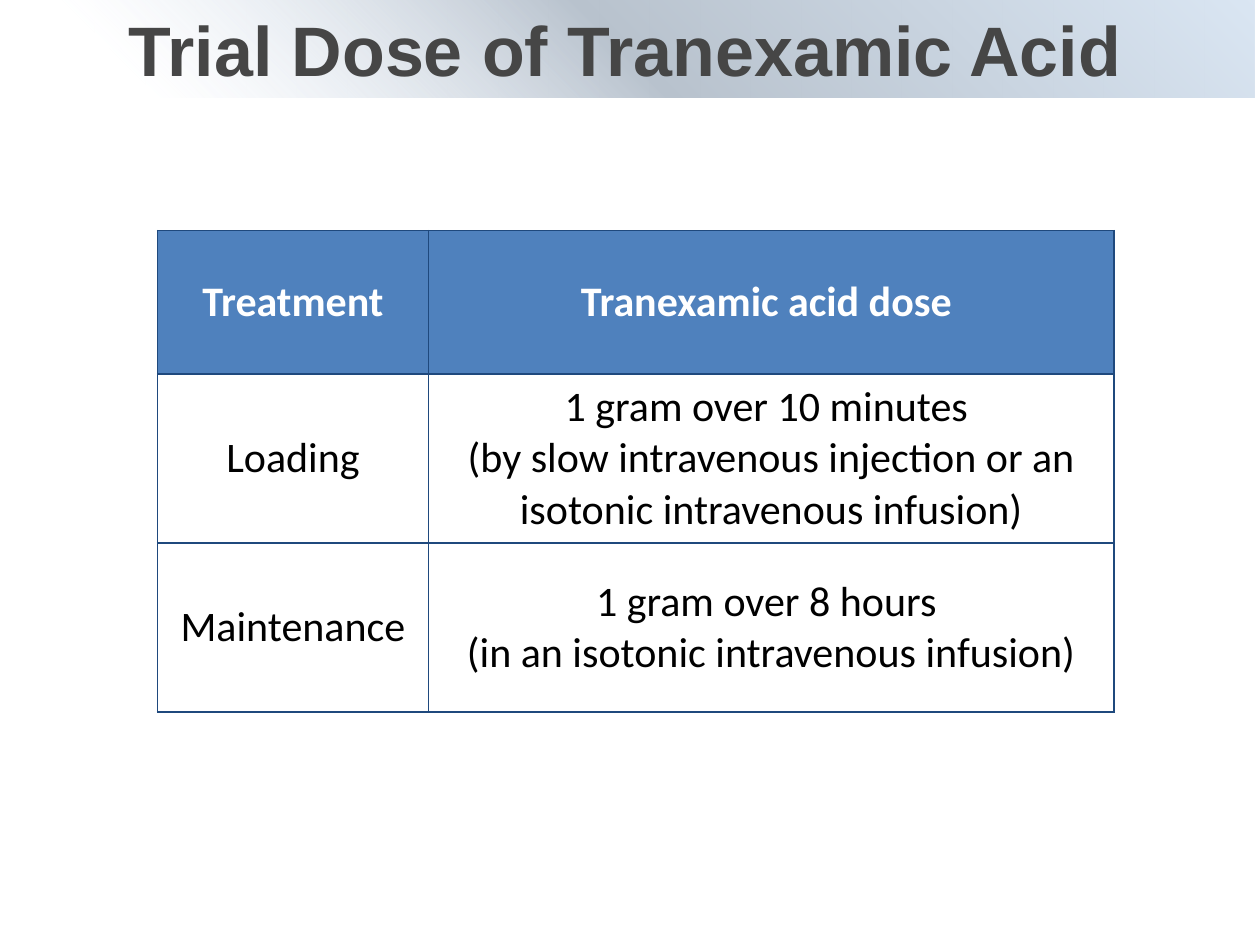
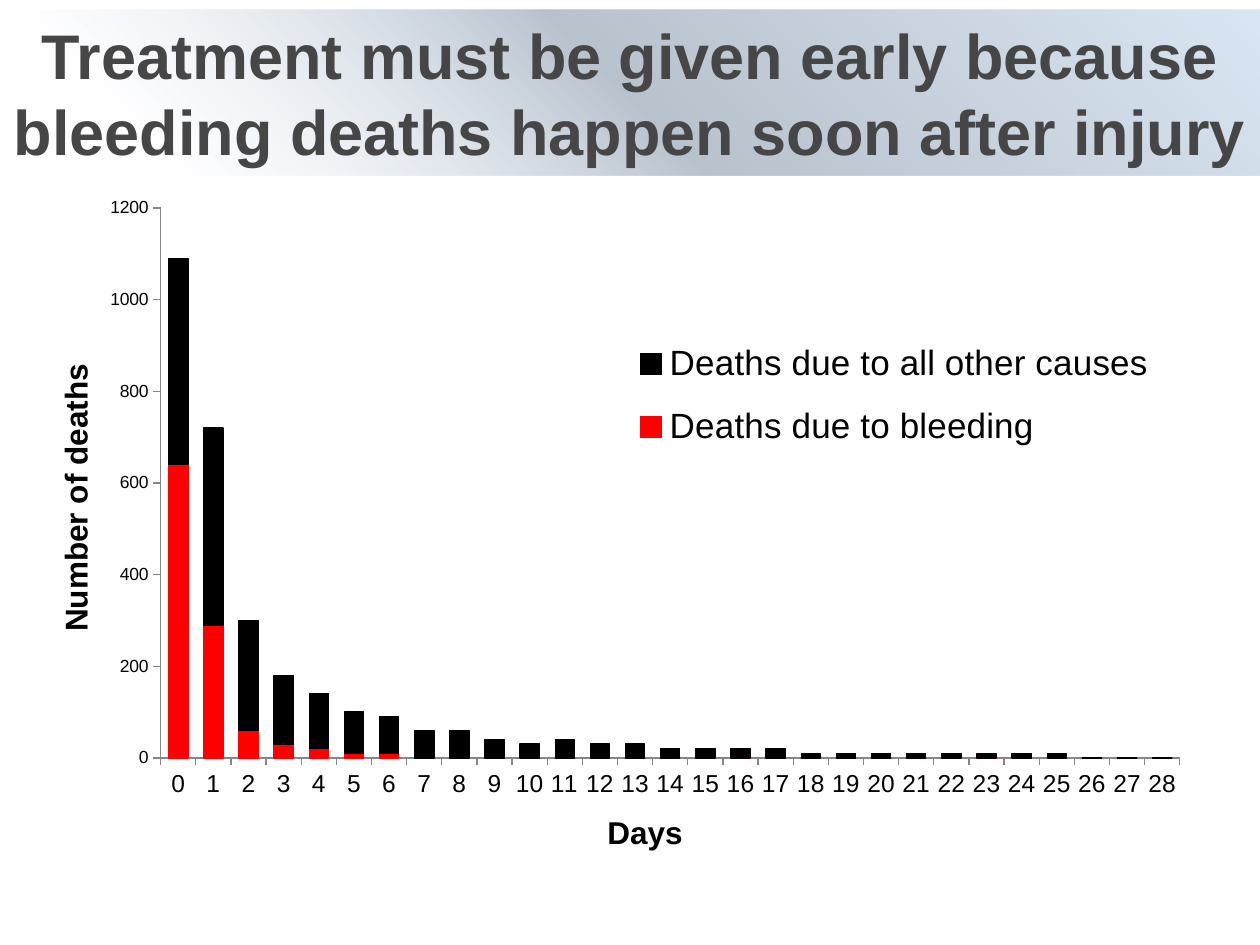
from dataclasses import dataclass
from lxml import etree
from pptx import Presentation
from pptx.chart.data import CategoryChartData
from pptx.dml.color import RGBColor
from pptx.enum.chart import XL_CHART_TYPE as ChartType, XL_LEGEND_POSITION as LegendPos
from pptx.enum.chart import XL_TICK_MARK as TickMark
from pptx.enum.text import MSO_ANCHOR as Anchor, MSO_AUTO_SIZE as AutoSize, PP_ALIGN as Align
from pptx.oxml import parse_xml
from pptx.oxml.ns import nsdecls, qn
from pptx.util import Inches, Pt


# Theme
@dataclass(frozen=True)
class Theme:
    heading_font: str = "Arial"
    table_font: str = "Calibri"
    title: str = "464646"
    header: str = "4F81BD"
    border: str = "1F497D"
    axis: str = "868686"
    white: str = "FFFFFF"
    black: str = "000000"
    red: str = "FF0000"
    band_stops: tuple = ((12, "DCE6F2", 0), (50, "B8C2CD", 100), (100, "DAE6F3", 100))
    band_angle: int = 315
    table_size: int = 24
    axis_title_size: int = 18
    legend_size: int = 20
    day_size: int = 14
    count_size: int = 10


THEME = Theme()
WIDTH, HEIGHT = 10, 7.5

# Content: titles as text, size and band (left, top, width, height)
DOSE_TITLE = ("Trial Dose of Tranexamic Acid", 40, (-0.04, 0, WIDTH, 0.77))
TIMING_TITLE = ("Treatment must be given early because bleeding deaths happen soon after injury",
                36, (0, 0.08, WIDTH, 1.31))

DOSE_ROWS = [
    (["Treatment"], ["Tranexamic acid dose "]),
    (["Loading"], ["1 gram over 10 minutes ",
                   "(by slow intravenous injection or an isotonic intravenous infusion)"]),
    (["Maintenance"], ["1 gram over 8 hours ", "(in an isotonic intravenous infusion)"]),
]
DOSE_CORNER = (1.25, 1.83)
DOSE_COLUMNS = (2.15, 5.44)
DOSE_HEIGHTS = (1.14, 1.34, 1.34)

DAYS = range(29)
DEATHS = [
    ("Deaths due to bleeding", THEME.red, [640, 290, 60, 30, 20, 10, 10] + [0] * 22),
    ("Deaths due to all other causes", THEME.black,
     [450, 430, 240, 150, 120, 90, 80, 60, 60, 40, 30, 40, 30, 30]
     + [20] * 4 + [10] * 8 + [0] * 3),
]
CHART_BOX = (0.39, 1.48, 9.13, 5.35)
PLOT_SHARE = (0.097, 0.032, 0.886, 0.816)
LEGEND_SHARE = (0.5, 0.2, 0.47, 0.22)


def inches(values):
    return [Inches(value) for value in values]


def style_font(font, size, color=THEME.black, name=THEME.heading_font, bold=False):
    font.name, font.size, font.bold = name, Pt(size), bold
    font.color.rgb = RGBColor.from_string(color)


def write_text(frame, lines, **style):
    """Fill a text frame with centred paragraphs in one format."""
    frame.word_wrap = True
    for index, line in enumerate(lines):
        para = frame.add_paragraph() if index else frame.paragraphs[0]
        para.alignment = Align.CENTER
        span = para.add_run()
        span.text = line
        style_font(span.font, **style)


# Shared page with a title on a gradient band
def add_page(deck, title, size, band):
    page = deck.slides.add_slide(deck.slide_layouts[5])
    box = page.shapes.title
    box.left, box.top, box.width, box.height = inches(band)
    stops = "".join(
        f'<a:gs pos="{place * 1000}"><a:srgbClr val="{color}">'
        f'<a:alpha val="{opacity * 1000}"/></a:srgbClr></a:gs>'
        for place, color, opacity in THEME.band_stops)
    box.element.spPr.append(parse_xml(
        f'<a:gradFill {nsdecls("a")} rotWithShape="1"><a:gsLst>{stops}</a:gsLst>'
        f'<a:lin ang="{THEME.band_angle * 60000}" scaled="0"/></a:gradFill>'))
    frame = box.text_frame
    frame.auto_size = AutoSize.NONE
    frame.vertical_anchor = Anchor.MIDDLE
    write_text(frame, [title], size=size, color=THEME.title, bold=True)
    return page


# Dose table
def draw_borders(cell):
    properties = cell._tc.get_or_add_tcPr()
    for index, side in enumerate(("lnL", "lnR", "lnT", "lnB")):
        properties.insert(index, parse_xml(
            f'<a:{side} {nsdecls("a")} w="{Pt(1)}"><a:solidFill>'
            f'<a:srgbClr val="{THEME.border}"/></a:solidFill></a:{side}>'))


def add_dose_table(page):
    size = sum(DOSE_COLUMNS), sum(DOSE_HEIGHTS)
    table = page.shapes.add_table(len(DOSE_ROWS), len(DOSE_COLUMNS),
                                  *inches(DOSE_CORNER + size)).table
    table.horz_banding = False
    for column, width in zip(table.columns, DOSE_COLUMNS):
        column.width = Inches(width)
    for row_index, (row, height) in enumerate(zip(table.rows, DOSE_HEIGHTS)):
        row.height = Inches(height)
        is_header = row_index == 0
        for cell, lines in zip(row.cells, DOSE_ROWS[row_index]):
            cell.vertical_anchor = Anchor.MIDDLE
            cell.margin_left = cell.margin_right = Inches(0.12)
            cell.margin_top = cell.margin_bottom = Inches(0.06)
            if is_header:
                cell.fill.solid()
                cell.fill.fore_color.rgb = RGBColor.from_string(THEME.header)
            else:
                cell.fill.background()
            draw_borders(cell)
            write_text(cell.text_frame, lines, size=THEME.table_size, name=THEME.table_font,
                       color=THEME.white if is_header else THEME.black, bold=is_header)


# Deaths chart
def place_part(part, index, share, inner=False):
    """Fix a chart part at a share (x, y, w, h) of the chart area."""
    for old in part.findall(qn("c:layout")):
        part.remove(old)
    layout = etree.Element(qn("c:layout"))
    manual = etree.SubElement(layout, qn("c:manualLayout"))
    settings = [("layoutTarget", "inner")] if inner else []
    settings += [("xMode", "edge"), ("yMode", "edge"), *zip("xywh", share)]
    for name, value in settings:
        etree.SubElement(manual, qn(f"c:{name}")).set("val", str(value))
    part.insert(index, layout)


def style_axis(axis, title, size):
    axis.has_major_gridlines = False
    axis.major_tick_mark, axis.minor_tick_mark = TickMark.OUTSIDE, TickMark.NONE
    axis.format.line.color.rgb = RGBColor.from_string(THEME.axis)
    style_font(axis.tick_labels.font, size)
    write_text(axis.axis_title.text_frame, [title], size=THEME.axis_title_size, bold=True)


def add_deaths_chart(page):
    data = CategoryChartData()
    data.categories = [str(day) for day in DAYS]
    for name, _, values in DEATHS:
        data.add_series(name, values)
    chart = page.shapes.add_chart(ChartType.COLUMN_STACKED, *inches(CHART_BOX), data).chart
    style_font(chart.font, THEME.count_size)
    chart.has_title = False
    plot = chart.plots[0]
    plot.gap_width, plot.overlap, plot.vary_by_categories = 83, 100, False
    for series, (_, color, _) in zip(plot.series, DEATHS):
        series.format.fill.solid()
        series.format.fill.fore_color.rgb = RGBColor.from_string(color)
        series.format.line.color.rgb = RGBColor.from_string(color)
        series.format.line.width = Pt(0.75)
    style_axis(chart.category_axis, "Days", THEME.day_size)
    counts = chart.value_axis
    style_axis(counts, "Number of deaths", THEME.count_size)
    counts.minimum_scale, counts.maximum_scale, counts.major_unit = 0, 1200, 200
    chart.has_legend = True
    legend = chart.legend
    legend.position = LegendPos.RIGHT
    legend.include_in_layout = False
    style_font(legend.font, THEME.legend_size)
    place_part(legend._element, 1, LEGEND_SHARE)
    place_part(plot._element.getparent(), 0, PLOT_SHARE, inner=True)


def main():
    deck = Presentation()
    deck.slide_width, deck.slide_height = inches((WIDTH, HEIGHT))
    add_dose_table(add_page(deck, *DOSE_TITLE))
    add_deaths_chart(add_page(deck, *TIMING_TITLE))
    deck.save("out.pptx")


if __name__ == "__main__":
    main()
